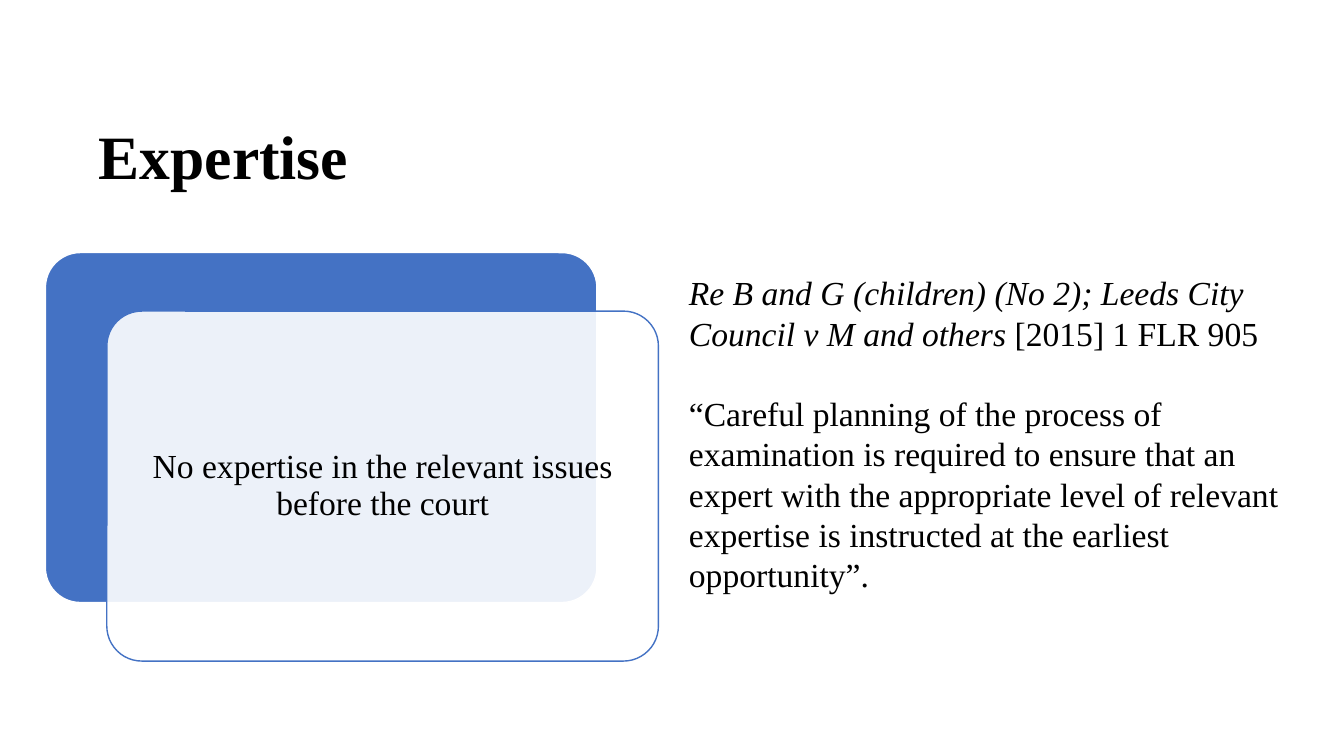
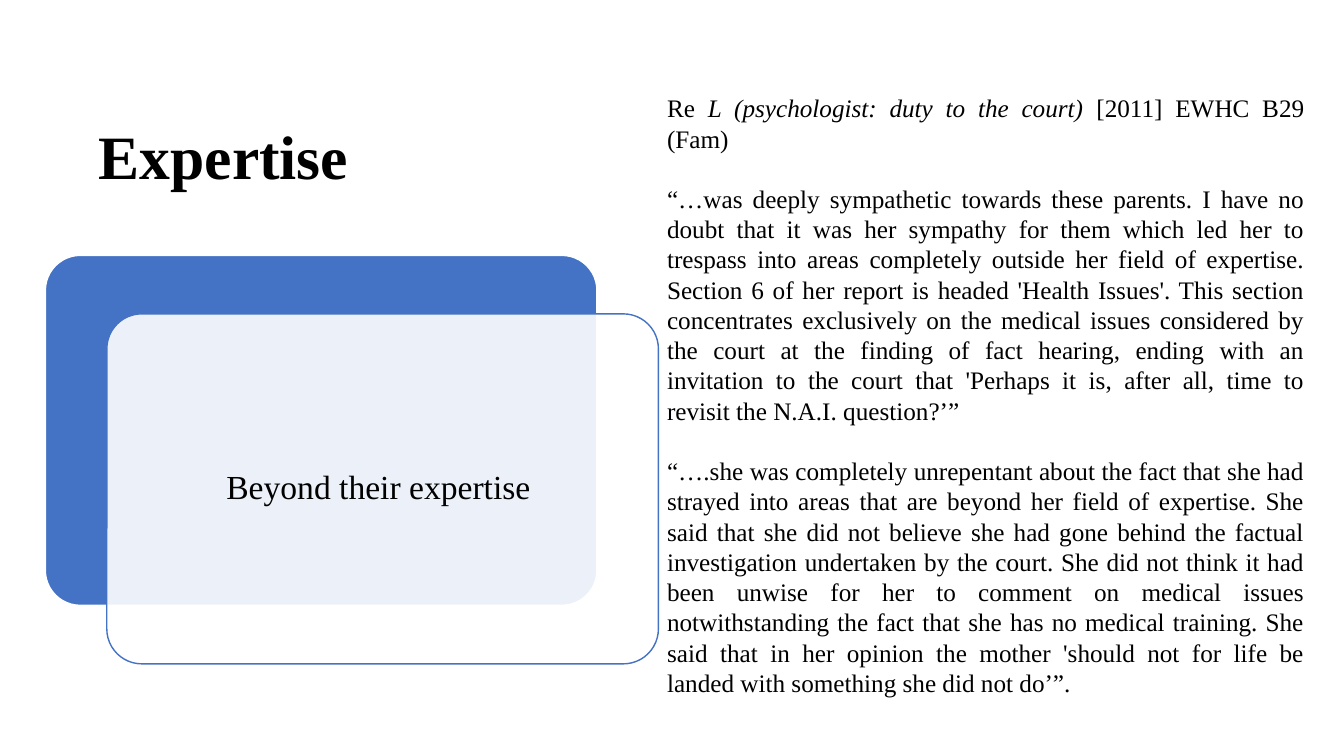
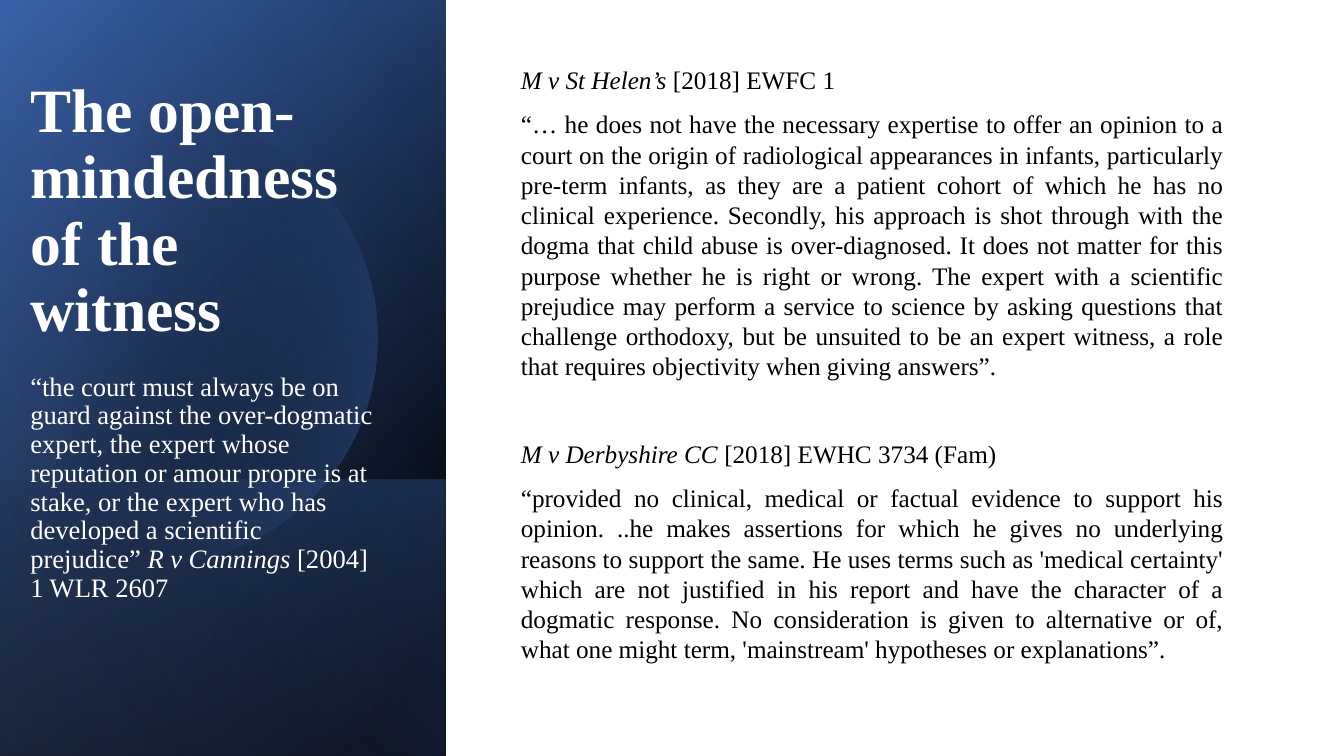
import math

from lxml import etree
from pptx import Presentation
from pptx.dml.color import RGBColor
from pptx.enum.shapes import MSO_SHAPE
from pptx.enum.text import MSO_ANCHOR, PP_ALIGN
from pptx.oxml.ns import qn
from pptx.util import Pt

RECTANGLE = MSO_SHAPE.RECTANGLE
ROUNDED = MSO_SHAPE.ROUNDED_RECTANGLE
TOP, MIDDLE = MSO_ANCHOR.TOP, MSO_ANCHOR.MIDDLE
LEFT, CENTER, JUSTIFY = PP_ALIGN.LEFT, PP_ALIGN.CENTER, PP_ALIGN.JUSTIFY

COLORS = {
    "white": "FFFFFF",
    "black": "000000",
    "blue": "4472C4",
    "deep_blue": "2F5597",
    "light_blue": "8FAADC",
}
FONT = "Times New Roman"
TITLE_SIZE = 44
SLIDE_WIDTH, SLIDE_HEIGHT = 960, 540
PANEL_WIDTH = 318.5
CARD_WIDTH, CARD_HEIGHT = 394, 250


def rgb(name):
    return RGBColor.from_string(COLORS[name])


def add_paragraph(frame, runs, size, color="black", align=LEFT, before=0, spacing=1.0, bold=False):
    is_first = not frame.paragraphs[0].runs
    paragraph = frame.paragraphs[0] if is_first else frame.add_paragraph()
    paragraph.alignment = align
    paragraph.space_before = Pt(before)
    paragraph.line_spacing = spacing
    for text, italic in runs:
        run = paragraph.add_run()
        run.text = text
        run.font.name = FONT
        run.font.size = Pt(size)
        run.font.bold = bold
        run.font.italic = italic
        run.font.color.rgb = rgb(color)


def add_text_frame(slide, left, top, width, height, anchor=TOP):
    box = slide.shapes.add_textbox(Pt(left), Pt(top), Pt(width), Pt(height))
    frame = box.text_frame
    frame.word_wrap = True
    frame.vertical_anchor = anchor
    return frame


def add_title(frame, text, color="black"):
    add_paragraph(frame, [(text, False)], TITLE_SIZE, color, spacing=0.9, bold=True)


def add_quotes(slide, left, top, width, height, size, align, paragraphs):
    frame = add_text_frame(slide, left, top, width, height)
    for before, runs in paragraphs:
        add_paragraph(frame, runs, size, align=align, before=before)


def set_alpha(shape, percent):
    color = shape.fill._xPr.find(qn("a:solidFill"))[0]
    etree.SubElement(color, qn("a:alpha"), val=str(percent * 1000))


def set_gradient(shape, angle, stops):
    shape.shadow.inherit = False
    shape.line.fill.background()
    shape.fill.gradient()
    gradient = shape.fill._xPr.find(qn("a:gradFill"))
    for child in list(gradient):
        gradient.remove(child)
    gradient.set("rotWithShape", "1")
    stop_list = etree.SubElement(gradient, qn("a:gsLst"))
    for position, name, opacity in stops:
        stop = etree.SubElement(stop_list, qn("a:gs"), pos=str(position * 1000))
        color = etree.SubElement(stop, qn("a:srgbClr"), val=COLORS[name])
        etree.SubElement(color, qn("a:alpha"), val=str(opacity * 1000))
    etree.SubElement(gradient, qn("a:lin"), ang=str(angle * 60000), scaled="0")


def add_card(slide, left, top, fill, line):
    card = slide.shapes.add_shape(ROUNDED, Pt(left), Pt(top), Pt(CARD_WIDTH), Pt(CARD_HEIGHT))
    card.adjustments[0] = 0.1
    card.shadow.inherit = False
    card.fill.solid()
    card.fill.fore_color.rgb = rgb(fill)
    card.line.color.rgb = rgb(line)
    card.line.width = Pt(1)
    return card


def add_stacked_cards(slide, top, text):
    add_card(slide, 32.4, top, "blue", "white")
    front = add_card(slide, 76.3, top + 41.8, "white", "blue")
    set_alpha(front, 90)
    frame = front.text_frame
    frame.word_wrap = True
    frame.vertical_anchor = MIDDLE
    frame.margin_left = frame.margin_right = Pt(7.2)
    frame.margin_top = frame.margin_bottom = Pt(7.2)
    add_paragraph(frame, [(text, False)], 24, align=CENTER, spacing=0.9)


def add_panel_layer(slide, top, angle, stops):
    height = SLIDE_HEIGHT - top
    left = (PANEL_WIDTH - height) / 2
    turned_top = top + (height - PANEL_WIDTH) / 2
    layer = slide.shapes.add_shape(RECTANGLE, Pt(left), Pt(turned_top), Pt(height), Pt(PANEL_WIDTH))
    layer.rotation = 90
    layer._element.spPr.find(qn("a:xfrm")).set("flipH", "1")
    set_gradient(layer, angle, stops)


def add_clipped_circle(slide, center_x, center_y, radius, angle, stops):
    limit = math.acos(-center_x / radius)
    segments = 72
    points = []
    for step in range(segments + 1):
        turn = limit * (2 * step / segments - 1)
        points.append((Pt(center_x + radius * math.cos(turn)), Pt(center_y + radius * math.sin(turn))))
    builder = slide.shapes.build_freeform(*points[0])
    builder.add_line_segments(points[1:], close=True)
    set_gradient(builder.convert_to_shape(), angle, stops)


def add_expertise_slide(presentation, cards_top, card_text):
    slide = add_slide(presentation)
    add_title(add_text_frame(slide, 63.4, 62.6, 378, 103, MIDDLE), "Expertise")
    add_stacked_cards(slide, cards_top, card_text)
    return slide


def add_slide(presentation):
    return presentation.slides.add_slide(presentation.slide_layouts[6])


def build_no_expertise(presentation):
    slide = add_expertise_slide(presentation, 180.4, "No expertise in the relevant issues before the court")
    add_quotes(slide, 485, 190.8, 469.4, 240, 24, LEFT, [
        (0, [("Re B and G (children) (No 2); Leeds City Council v M and others ", True),
             ("[2015] 1 FLR 905", False)]),
        (28.8, [("“Careful planning of the process of examination is required to ensure that an expert "
                 "with the appropriate level of relevant expertise is instructed at the earliest "
                 "opportunity”.", False)]),
    ])


def build_beyond_expertise(presentation):
    slide = add_expertise_slide(presentation, 182.4, "Beyond their expertise ")
    add_quotes(slide, 469.4, 62.6, 469.4, 445, 18, JUSTIFY, [
        (0, [("Re ", False), ("L (psychologist: duty to the court) ", True),
             ("[2011] EWHC B29 (Fam)", False)]),
        (21.6, [("“…was deeply sympathetic towards these parents. I have no doubt that it was her "
                 "sympathy for them which led her to trespass into areas completely outside her field "
                 "of expertise. Section 6 of her report is headed 'Health Issues'. This section "
                 "concentrates exclusively on the medical issues considered by the court at the finding "
                 "of fact hearing, ending with an invitation to the court that 'Perhaps it is, after "
                 "all, time to revisit the N.A.I. question?’”", False)]),
        (21.6, [("“….she was completely unrepentant about the fact that she had strayed into areas that "
                 "are beyond her field of expertise. She said that she did not believe she had gone "
                 "behind the factual investigation undertaken by the court. She did not think it had "
                 "been unwise for her to comment on medical issues notwithstanding the fact that she "
                 "has no medical training. She said that in her opinion the mother 'should not for life "
                 "be landed with something she did not do’”.", False)]),
    ])


def build_open_mindedness(presentation):
    slide = add_slide(presentation)
    add_panel_layer(slide, 0, 50, [(8, "black", 100), (100, "deep_blue", 100)])
    add_panel_layer(slide, 0, 30, [(0, "black", 0), (99, "blue", 46)])
    add_panel_layer(slide, 342.7, 130, [(2, "blue", 29), (100, "black", 30)])
    add_clipped_circle(slide, 107.5, 241, 162, 14, [(29, "black", 0), (100, "blue", 43)])
    add_panel_layer(slide, 0, 120, [(0, "black", 0), (99, "light_blue", 11)])

    frame = add_text_frame(slide, 14.6, 53, 260.6, 390)
    add_title(frame, "The open-mindedness of the witness", "white")
    add_paragraph(frame, [
        ("“the court must always be on guard against the over-dogmatic expert, the expert whose "
         "reputation or amour propre is at stake, or the expert who has developed a scientific "
         "prejudice” ", False),
        ("R v Cannings ", True),
        ("[2004] 1 WLR 2607", False),
    ], 19, "white", before=20, spacing=0.9)

    add_quotes(slide, 365, 42.5, 516.2, 440, 18, JUSTIFY, [
        (0, [("M v St Helen’s ", True), ("[2018] EWFC 1", False)]),
        (10, [("“… he does not have the necessary expertise to offer an opinion to a court on the origin "
               "of radiological appearances in infants, particularly pre-term infants, as they are a "
               "patient cohort of which he has no clinical experience. Secondly, his approach is shot "
               "through with the dogma that child abuse is over-diagnosed. It does not matter for this "
               "purpose whether he is right or wrong. The expert with a scientific prejudice may perform "
               "a service to science by asking questions that challenge orthodoxy, but be unsuited to be "
               "an expert witness, a role that requires objectivity when giving answers”.", False)]),
        (41, [("M v Derbyshire CC ", True), ("[2018] EWHC 3734 (Fam)", False)]),
        (10, [("“provided no clinical, medical or factual evidence to support his opinion. ..he makes "
               "assertions for which he gives no underlying reasons to support the same. He uses terms "
               "such as 'medical certainty' which are not justified in his report and have the character "
               "of a dogmatic response. No consideration is given to alternative or of, what one might "
               "term, 'mainstream' hypotheses or explanations”.", False)]),
    ])


def main():
    presentation = Presentation()
    presentation.slide_width = Pt(SLIDE_WIDTH)
    presentation.slide_height = Pt(SLIDE_HEIGHT)
    build_no_expertise(presentation)
    build_beyond_expertise(presentation)
    build_open_mindedness(presentation)
    presentation.save("out.pptx")


if __name__ == "__main__":
    main()
